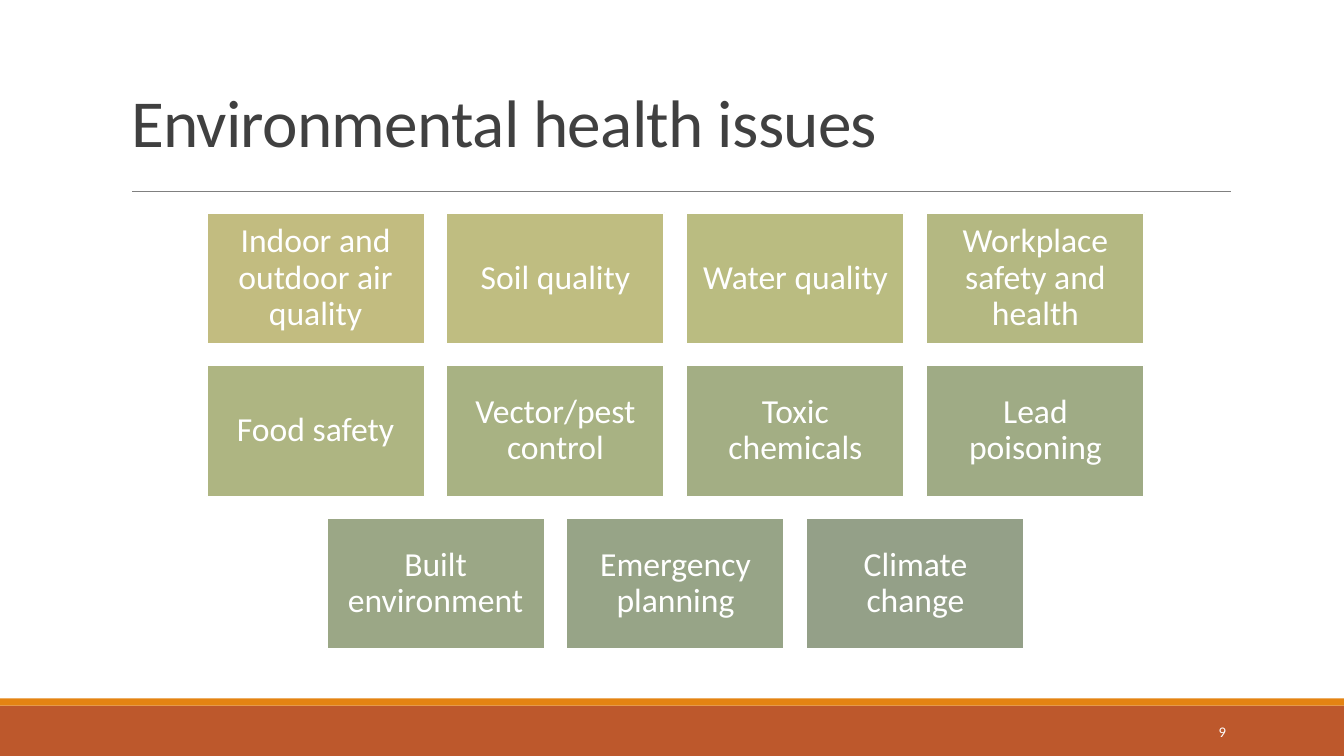
from dataclasses import dataclass
from typing import Any

import pptx
import pptx.dml.color
import pptx.enum.shapes
import pptx.enum.text
import pptx.oxml
import pptx.oxml.ns
import pptx.util

Inches = pptx.util.Inches
Pt = pptx.util.Pt
ALIGN = pptx.enum.text.PP_ALIGN
ANCHOR = pptx.enum.text.MSO_ANCHOR
RECTANGLE = pptx.enum.shapes.MSO_SHAPE.RECTANGLE

FONT = "Calibri"
WHITE = "FFFFFF"
SLIDE_WIDTH, SLIDE_HEIGHT = 13.33, 7.5
TILE_WIDTH, TILE_HEIGHT = 2.16, 1.3
COLUMN_STEP, ROW_STEP = 2.38, 1.515
GRID_CENTRE, GRID_TOP = 6.7, 2.11


@dataclass
class Tile:
    text: str
    fill: str


@dataclass
class Band:
    top: float
    height: float
    fill: str


BANDS = [Band(7, 0.5, "BD582C"), Band(6.93, 0.07, "E48312")]
TILE_ROWS = [
    [
        Tile("Indoor and outdoor air quality", "C2BC80"),
        Tile("Soil quality", "BFBD81"),
        Tile("Water quality", "BABC81"),
        Tile("Workplace safety and health", "B4B882"),
    ],
    [
        Tile("Food safety", "AEB582"),
        Tile("Vector/pest control", "A8B283"),
        Tile("Toxic chemicals", "A3AE84"),
        Tile("Lead poisoning", "9FAB85"),
    ],
    [
        Tile("Built environment", "9BA786"),
        Tile("Emergency planning", "97A487"),
        Tile("Climate change", "94A088"),
    ],
]


def colour(value: str) -> pptx.dml.color.RGBColor:
    return pptx.dml.color.RGBColor.from_string(value)


def apply_format(target: Any, values: dict[str, Any]) -> None:
    for name, value in values.items():
        setattr(target, name, value)


def write_text(shape: Any, text: str, size: float, text_colour: str,
               anchor: Any, paragraph_format: dict[str, Any]) -> Any:
    """Fill a shape with one formatted paragraph and return its run."""
    frame = shape.text_frame
    apply_format(frame, {
        "word_wrap": True,
        "auto_size": pptx.enum.text.MSO_AUTO_SIZE.NONE,
        "vertical_anchor": anchor,
    })
    paragraph = frame.paragraphs[0]
    apply_format(paragraph, paragraph_format)
    run = paragraph.add_run()
    run.text = text
    apply_format(run.font, {"name": FONT, "size": Pt(size)})
    run.font.color.rgb = colour(text_colour)
    return run


def add_rectangle(shapes: Any, left: float, top: float, width: float,
                  height: float, fill: str) -> Any:
    shape = shapes.add_shape(RECTANGLE, Inches(left), Inches(top),
                             Inches(width), Inches(height))
    shape.shadow.inherit = False
    shape.fill.solid()
    shape.fill.fore_color.rgb = colour(fill)
    shape.line.fill.background()
    return shape


def add_tile(shapes: Any, tile: Tile, left: float, top: float) -> None:
    shape = add_rectangle(shapes, left, top, TILE_WIDTH, TILE_HEIGHT, tile.fill)
    shape.line.color.rgb = colour(WHITE)
    shape.line.width = Pt(1.25)
    margins = ("margin_left", "margin_top", "margin_right", "margin_bottom")
    apply_format(shape.text_frame, dict.fromkeys(margins, Inches(0.1)))
    write_text(shape, tile.text, 24, WHITE, ANCHOR.MIDDLE,
               {"alignment": ALIGN.CENTER, "line_spacing": 0.9})


def add_rule(shapes: Any, left: float, right: float, top: float) -> None:
    rule = shapes.add_connector(pptx.enum.shapes.MSO_CONNECTOR.STRAIGHT,
                                Inches(left), Inches(top),
                                Inches(right), Inches(top))
    rule.line.color.rgb = colour("808080")
    rule.line.width = Pt(0.5)
    effects = pptx.oxml.parse_xml(
        f"<a:effectLst {pptx.oxml.ns.nsdecls('a')}/>")
    rule._element.spPr.append(effects)


def main() -> None:
    presentation = pptx.Presentation()
    presentation.slide_width = Inches(SLIDE_WIDTH)
    presentation.slide_height = Inches(SLIDE_HEIGHT)
    slide = presentation.slides.add_slide(presentation.slide_layouts[5])
    shapes = slide.shapes

    # Footer bands and the rule below the title
    for band in BANDS:
        add_rectangle(shapes, 0, band.top, SLIDE_WIDTH, band.height, band.fill)
    add_rule(shapes, 1.31, 12.21, 1.9)

    # Title
    title = shapes.title
    apply_format(title, {"left": Inches(1.2), "top": Inches(0.31),
                         "width": Inches(11), "height": Inches(1.34)})
    title_run = write_text(title, "Environmental health issues", 48, "404040",
                           ANCHOR.BOTTOM,
                           {"alignment": ALIGN.LEFT, "line_spacing": 0.85})
    title_run.font._element.set("spc", "-50")

    # Slide number
    number = shapes.add_textbox(Inches(10.83), Inches(7.06),
                                Inches(1.43), Inches(0.4))
    write_text(number, "9", 10.5, WHITE, ANCHOR.MIDDLE,
               {"alignment": ALIGN.RIGHT})

    # Issue tiles, each row centred
    tiles = shapes.add_group_shape().shapes
    for row_index, row in enumerate(TILE_ROWS):
        row_width = (len(row) - 1) * COLUMN_STEP + TILE_WIDTH
        row_left = GRID_CENTRE - row_width / 2
        for column_index, tile in enumerate(row):
            add_tile(tiles, tile, row_left + column_index * COLUMN_STEP,
                     GRID_TOP + row_index * ROW_STEP)

    presentation.save("out.pptx")


if __name__ == "__main__":
    main()
